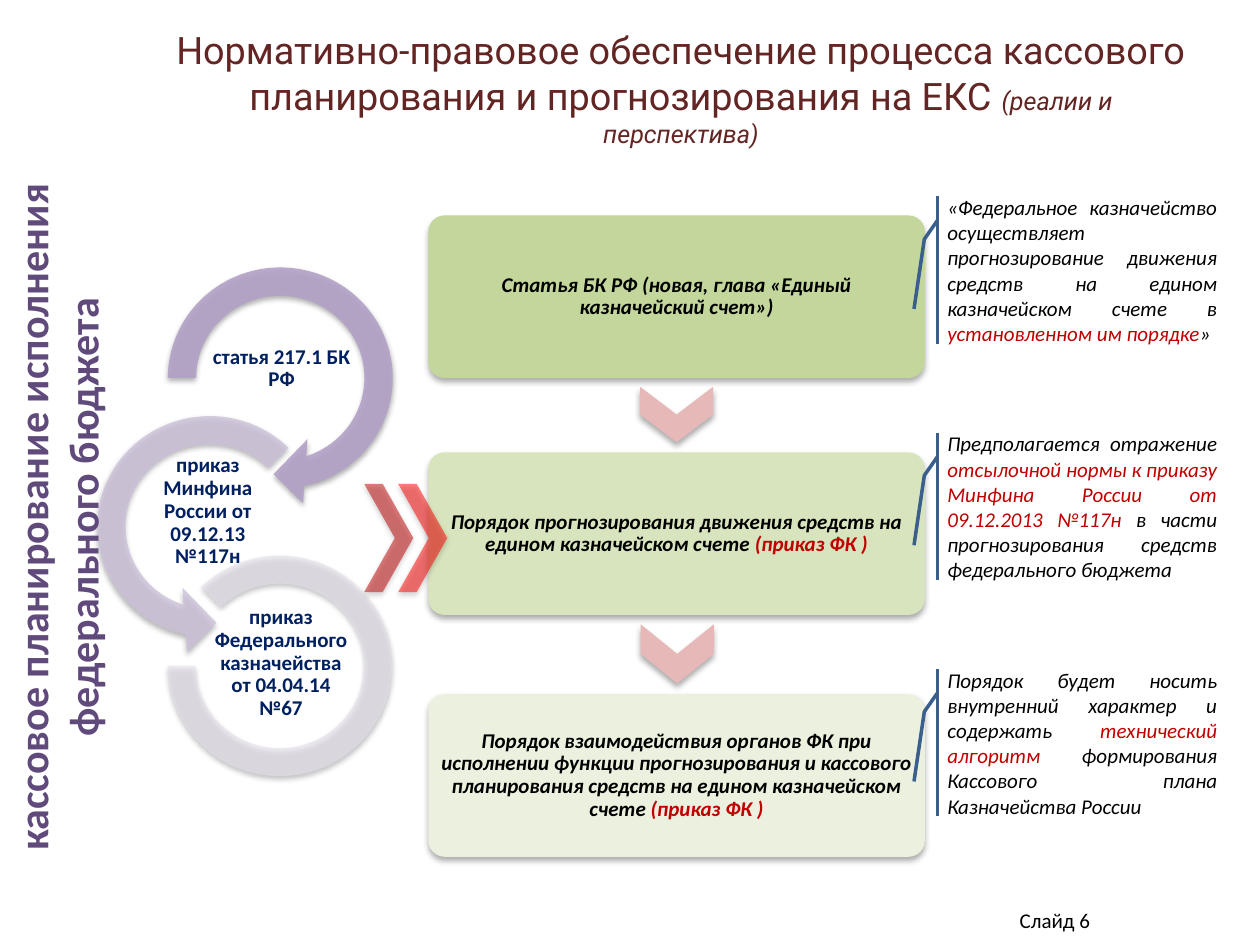
"""Build the slide on the legal framework of cash planning and forecasting."""
from lxml import etree
from pptx import Presentation
from pptx.dml.color import RGBColor
from pptx.enum.shapes import MSO_SHAPE as SHAPE
from pptx.enum.text import MSO_ANCHOR as ANCHOR, PP_ALIGN as ALIGN
from pptx.oxml.ns import qn
from pptx.util import Inches, Pt

BLACK = RGBColor(0x00, 0x00, 0x00)
RED = RGBColor(0xC0, 0x00, 0x00)
BRIGHT_RED = RGBColor(0xFF, 0x00, 0x00)
MAROON = RGBColor(0x63, 0x25, 0x23)
NAVY = RGBColor(0x00, 0x20, 0x60)
PURPLE = RGBColor(0x60, 0x4A, 0x7B)
PINK = RGBColor(0xE6, 0xB9, 0xB8)
CALLOUT_BLUE = RGBColor(0x3A, 0x5F, 0x8C)
GREENS = [RGBColor(0xC3, 0xD6, 0x9B), RGBColor(0xD7, 0xE4, 0xBD), RGBColor(0xEB, 0xF1, 0xDE)]
LILACS = [RGBColor(0xB3, 0xA2, 0xC7), RGBColor(0xCC, 0xC1, 0xDA), RGBColor(0xE6, 0xE0, 0xEC)]

prs = Presentation()
prs.slide_width, prs.slide_height = Inches(10), Inches(7.5)
s = prs.slides.add_slide(prs.slide_layouts[6])


def add_filled(kind, box, color, adj=(), opacity=100, shade=(32, 3.5, 2.2)):
    sp = s.shapes.add_shape(kind, *map(Inches, box))
    for i, value in enumerate(adj):
        sp.adjustments[i] = value
    sp.fill.solid()
    sp.fill.fore_color.rgb = color
    sp.line.fill.background()
    sp.shadow.inherit = False
    fill = sp._element.spPr.find(qn("a:solidFill"))[0]
    etree.SubElement(fill, qn("a:alpha"), val=str(opacity * 1000))
    alpha, blur, dist = shade
    shadow = etree.SubElement(
        sp._element.spPr.find(qn("a:effectLst")), qn("a:outerShdw"),
        blurRad=str(Pt(blur)), dist=str(Pt(dist)), dir="5400000", rotWithShape="0")
    black = etree.SubElement(shadow, qn("a:srgbClr"), val="000000")
    etree.SubElement(black, qn("a:alpha"), val=str(alpha * 1000))
    return sp


def write(sp, runs, align=ALIGN.CENTER, anchor=ANCHOR.MIDDLE, inset=None, spacing=None, **font):
    tf = sp.text_frame
    tf.word_wrap = True
    tf.vertical_anchor = anchor
    if inset is not None:
        for side in ("left", "top", "right", "bottom"):
            setattr(tf, f"margin_{side}", Inches(inset))
    p = tf.paragraphs[0]
    p.alignment = align
    p.line_spacing = spacing
    for text, color, *extra in runs:
        r = p.add_run()
        r.text = text
        r.font.color.rgb = color
        style = {"name": "Calibri", "size": Pt(12), **font, **(extra[0] if extra else {})}
        for key, value in style.items():
            setattr(r.font, key, value)


title = s.shapes.add_textbox(Inches(1.24), Inches(0.3), Inches(8.33), Inches(0.79))
write(title, [
    ("Нормативно-правовое обеспечение процесса кассового планирования и прогнозирования на ЕКС ", MAROON),
    ("(реалии и перспектива)", MAROON, {"size": Pt(14.4), "italic": True}),
], name="Roboto", size=Pt(21.6))

steps = [
    (1.71, [("Статья БК РФ (новая, глава «Единый казначейский счет»)", BLACK)]),
    (3.59, [("Порядок прогнозирования движения средств на едином казначейском счете ", BLACK),
            ("(приказ ФК )", RED)]),
    (5.51, [("Порядок взаимодействия органов ФК при исполнении функции прогнозирования и кассового "
             "планирования средств на едином казначейском счете ", BLACK),
            ("(приказ ФК )", RED)]),
]
for (top, runs), color in zip(steps, GREENS):
    sp = add_filled(SHAPE.ROUNDED_RECTANGLE, (3.4, top, 3.94, 1.29), color, [0.1])
    write(sp, runs, inset=0.05, spacing=0.9, bold=True, italic=True)
for box in [(5.15, 3, 0.44, 0.58), (5.14, 4.9, 0.47, 0.58)]:
    add_filled(SHAPE.CHEVRON, box, PINK).rotation = 90

callouts = [
    [("«Федеральное казначейство осуществляет прогнозирование движения средств на едином "
      "казначейском счете в ", BLACK), ("установленном им порядке", RED), ("»", BLACK)],
    [("Предполагается отражение ", BLACK),
     ("отсылочной нормы к приказу Минфина России от 09.12.2013 №117н ", RED),
     ("в части прогнозирования средств федерального бюджета", BLACK)],
    [("Порядок будет носить внутренний характер и содержать ", BLACK),
     ("технический алгоритм", RED),
     (" формирования Кассового плана Казначейства России", BLACK)],
]
for row, runs in enumerate(callouts):
    sp = s.shapes.add_shape(SHAPE.LINE_CALLOUT_2_ACCENT_BAR, Inches(7.42),
                            Inches(1.56 + 1.875 * row), Inches(2.34), Inches(1.17))
    for i, value in enumerate([0.162, 0.009, 0.29, -0.036, 0.763, -0.071]):
        sp.adjustments[i] = value
    sp.fill.background()
    sp.line.color.rgb = CALLOUT_BLUE
    sp.line.width = Pt(2)
    sp.shadow.inherit = False
    write(sp, runs, align=ALIGN.JUSTIFY, italic=True)

number = s.shapes.add_textbox(Inches(6.42), Inches(7.1), Inches(2.33), Inches(0.4))
write(number, [("Слайд 6", BLACK)], align=ALIGN.RIGHT)

cycle = [
    (SHAPE.CIRCULAR_ARROW, (1.19, 1.98, 2.07, 2.04), [0.11, 11.423, 45, 108, 0.125], 90,
     (1.67, 2.52, 1.13, 0.81), "статья 217.1 БК РФ"),
    (SHAPE.LEFT_CIRCULAR_ARROW, (0.63, 3.16, 2.07, 2.04), [0.11, 11.423, 63, 189, 0.125], 80,
     (1.1, 3.58, 1.1, 0.96), "приказ Минфина России от 09.12.13 №117н"),
    (SHAPE.BLOCK_ARC, (1.33, 4.41, 1.78, 1.75), [135, 108, 0.127], 65,
     (1.67, 4.74, 1.12, 1.05), "приказ Федерального казначейства от 04.04.14 №67"),
]
soft = (35, 3.1, 1.8)
for (kind, box, adj, opacity, label_box, text), color in zip(cycle, LILACS):
    add_filled(kind, box, color, adj, opacity, soft)
    label = s.shapes.add_textbox(*map(Inches, label_box))
    write(label, [(text, NAVY)], inset=0.01, spacing=0.9, bold=True)

for left, color in [(2.89, RED), (3.16, BRIGHT_RED)]:
    add_filled(SHAPE.CHEVRON, (left, 3.84, 0.39, 0.86), color, [0.623], 50, soft)

side = s.shapes.add_textbox(Inches(-2.26), Inches(3.7), Inches(5.43), Inches(0.81))
side.rotation = 270
write(side, [("кассовое планирование исполнения федерального бюджета", PURPLE)],
      anchor=ANCHOR.TOP, inset=0, size=Pt(24), bold=True)

prs.save("out.pptx")
